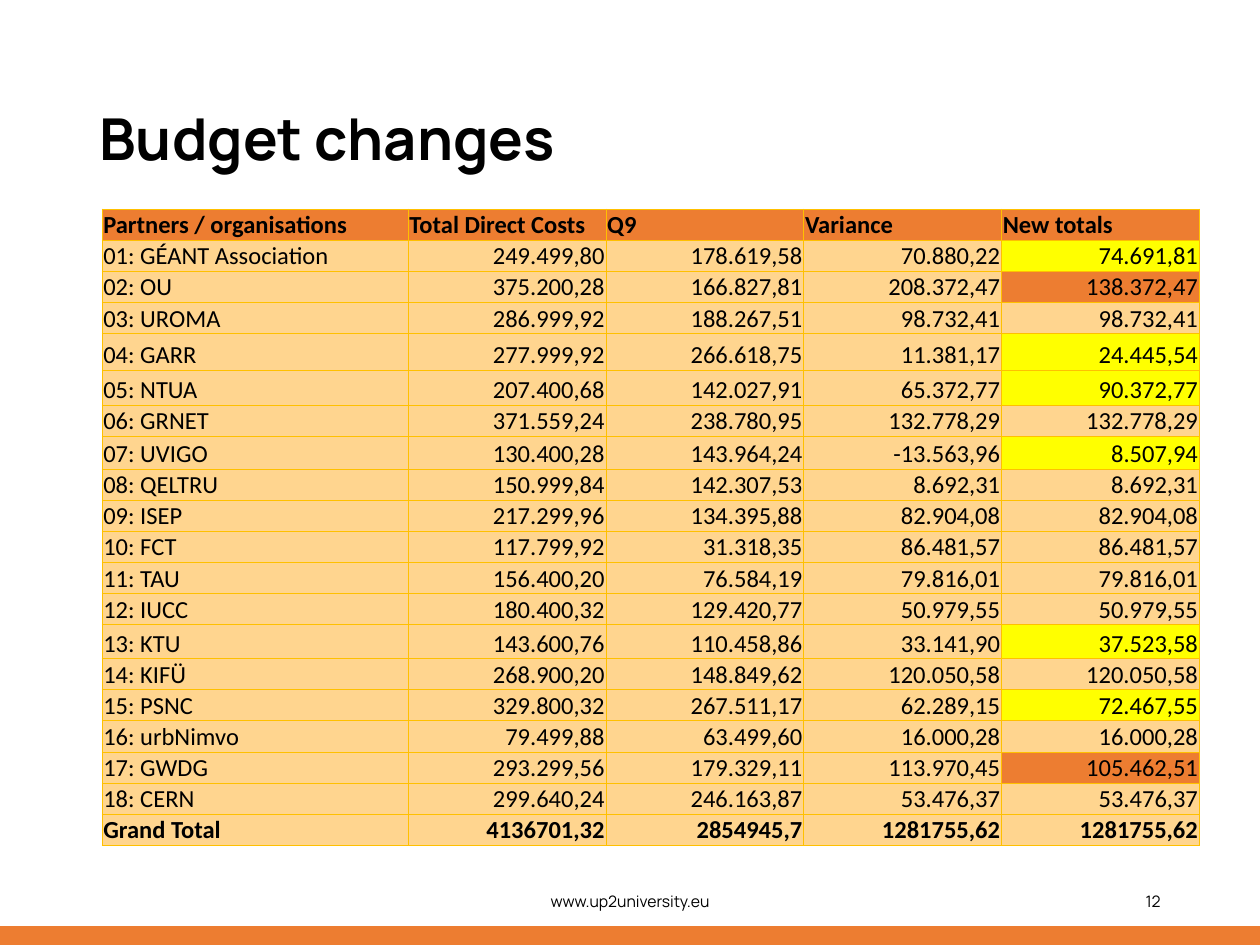
import pptx
import pptx.dml.color
import pptx.enum.shapes
import pptx.enum.text
import pptx.oxml
import pptx.oxml.ns
import pptx.util
from pptx.util import Inches

PP_ALIGN = pptx.enum.text.PP_ALIGN
MIDDLE = pptx.enum.text.MSO_ANCHOR.MIDDLE
BOTTOM = pptx.enum.text.MSO_ANCHOR.BOTTOM

BLACK = "000000"
ORANGE = "ED7D31"
PEACH = "FFD58F"
YELLOW = "FFFF00"
GOLD = "FFC000"

COLUMN_WIDTHS = [2.43] + [1.57] * 4
ROW_HEIGHT = 0.22
SPECIAL_HEIGHTS = {0: 0.21, 4: 0.29, 5: 0.28, 7: 0.26, 13: 0.27, 19: 0.21}
TOTAL_FILLS = {**dict.fromkeys((1, 4, 5, 7, 13, 15), YELLOW),
               **dict.fromkeys((2, 17), ORANGE)}

BUDGET = [
    ("Partners / organisations", "Total Direct Costs", "Q9", "Variance", "New totals"),
    ("01: GÉANT Association", "249.499,80", "178.619,58", "70.880,22", "74.691,81"),
    ("02: OU", "375.200,28", "166.827,81", "208.372,47", "138.372,47"),
    ("03: UROMA", "286.999,92", "188.267,51", "98.732,41", "98.732,41"),
    ("04: GARR", "277.999,92", "266.618,75", "11.381,17", "24.445,54"),
    ("05: NTUA", "207.400,68", "142.027,91", "65.372,77", "90.372,77"),
    ("06: GRNET", "371.559,24", "238.780,95", "132.778,29", "132.778,29"),
    ("07: UVIGO", "130.400,28", "143.964,24", "-13.563,96", "8.507,94"),
    ("08: QELTRU", "150.999,84", "142.307,53", "8.692,31", "8.692,31"),
    ("09: ISEP", "217.299,96", "134.395,88", "82.904,08", "82.904,08"),
    ("10: FCT", "117.799,92", "31.318,35", "86.481,57", "86.481,57"),
    ("11: TAU", "156.400,20", "76.584,19", "79.816,01", "79.816,01"),
    ("12: IUCC", "180.400,32", "129.420,77", "50.979,55", "50.979,55"),
    ("13: KTU", "143.600,76", "110.458,86", "33.141,90", "37.523,58"),
    ("14: KIFÜ", "268.900,20", "148.849,62", "120.050,58", "120.050,58"),
    ("15: PSNC", "329.800,32", "267.511,17", "62.289,15", "72.467,55"),
    ("16: urbNimvo", "79.499,88", "63.499,60", "16.000,28", "16.000,28"),
    ("17: GWDG", "293.299,56", "179.329,11", "113.970,45", "105.462,51"),
    ("18: CERN", "299.640,24", "246.163,87", "53.476,37", "53.476,37"),
    ("Grand Total", "4136701,32", "2854945,7", "1281755,62", "1281755,62"),
]


def paint(color_format, color):
    color_format.rgb = pptx.dml.color.RGBColor.from_string(color)


def fill_solid(target, color):
    target.fill.solid()
    paint(target.fill.fore_color, color)


def format_paragraph(paragraph, font_name, size, bold=False, align=PP_ALIGN.LEFT):
    paragraph.alignment = align
    paragraph.font.name = font_name
    paragraph.font.size = pptx.util.Pt(size)
    paragraph.font.bold = bold
    paint(paragraph.font.color, BLACK)


def add_title(slide, wording):
    title = slide.shapes.title
    title.left, title.top = Inches(0.69), Inches(0.4)
    title.width, title.height = Inches(7.56), Inches(1.45)
    title.text_frame.text = wording
    title.text_frame.vertical_anchor = MIDDLE
    heading = title.text_frame.paragraphs[0]
    format_paragraph(heading, "Manrope", 33, bold=True)
    heading.line_spacing = 0.9


def add_footer_text(slide, wording, left, width, align):
    footer = slide.shapes.add_textbox(Inches(left), Inches(6.95), Inches(width), Inches(0.4))
    footer.text_frame.word_wrap = True
    footer.text_frame.vertical_anchor = MIDDLE
    footer.text_frame.text = wording
    format_paragraph(footer.text_frame.paragraphs[0], "Manrope", 9, align=align)


def add_footer_bar(slide):
    bar = slide.shapes.add_shape(pptx.enum.shapes.MSO_SHAPE.RECTANGLE,
                                 Inches(0), Inches(7.35), Inches(10), Inches(0.15))
    bar.shadow.inherit = False
    fill_solid(bar, ORANGE)
    bar.line.fill.background()


def add_borders(cell):
    properties = cell._tc.get_or_add_tcPr()
    for side in ("lnL", "lnR", "lnT", "lnB"):
        properties.append(pptx.oxml.parse_xml(
            f'<a:{side} {pptx.oxml.ns.nsdecls("a")} w="{pptx.util.Pt(0.5)}">'
            f'<a:solidFill><a:srgbClr val="{GOLD}"/></a:solidFill></a:{side}>'))


def cell_fill(row, column):
    if row == 0:
        return ORANGE
    if column == len(COLUMN_WIDTHS) - 1:
        return TOTAL_FILLS.get(row, PEACH)
    return PEACH


def format_cell(cell, wording, row, column):
    cell.margin_left = cell.margin_right = cell.margin_top = Inches(0.01)
    cell.margin_bottom = 0
    cell.vertical_anchor = BOTTOM
    cell.text = wording
    is_number = row > 0 and column > 0
    format_paragraph(cell.text_frame.paragraphs[0], "Calibri", 14,
                     bold=row in (0, len(BUDGET) - 1),
                     align=PP_ALIGN.RIGHT if is_number else PP_ALIGN.LEFT)
    add_borders(cell)
    fill_solid(cell, cell_fill(row, column))


def add_budget_table(slide):
    heights = [SPECIAL_HEIGHTS.get(row, ROW_HEIGHT) for row in range(len(BUDGET))]
    table = slide.shapes.add_table(len(BUDGET), len(COLUMN_WIDTHS), Inches(0.81), Inches(1.66),
                                   Inches(sum(COLUMN_WIDTHS)), Inches(sum(heights))).table
    for column, width in zip(table.columns, COLUMN_WIDTHS):
        column.width = Inches(width)
    for row, (height, entries) in enumerate(zip(heights, BUDGET)):
        table.rows[row].height = Inches(height)
        for column, wording in enumerate(entries):
            format_cell(table.cell(row, column), wording, row, column)


def main():
    presentation = pptx.Presentation()
    presentation.slide_width = Inches(10)
    presentation.slide_height = Inches(7.5)
    slide = presentation.slides.add_slide(presentation.slide_layouts[5])
    add_footer_bar(slide)
    add_title(slide, "Budget changes")
    add_budget_table(slide)
    add_footer_text(slide, "www.up2university.eu", 3.31, 3.38, PP_ALIGN.CENTER)
    add_footer_text(slide, "12", 7.06, 2.25, PP_ALIGN.RIGHT)
    presentation.save("out.pptx")


if __name__ == "__main__":
    main()
